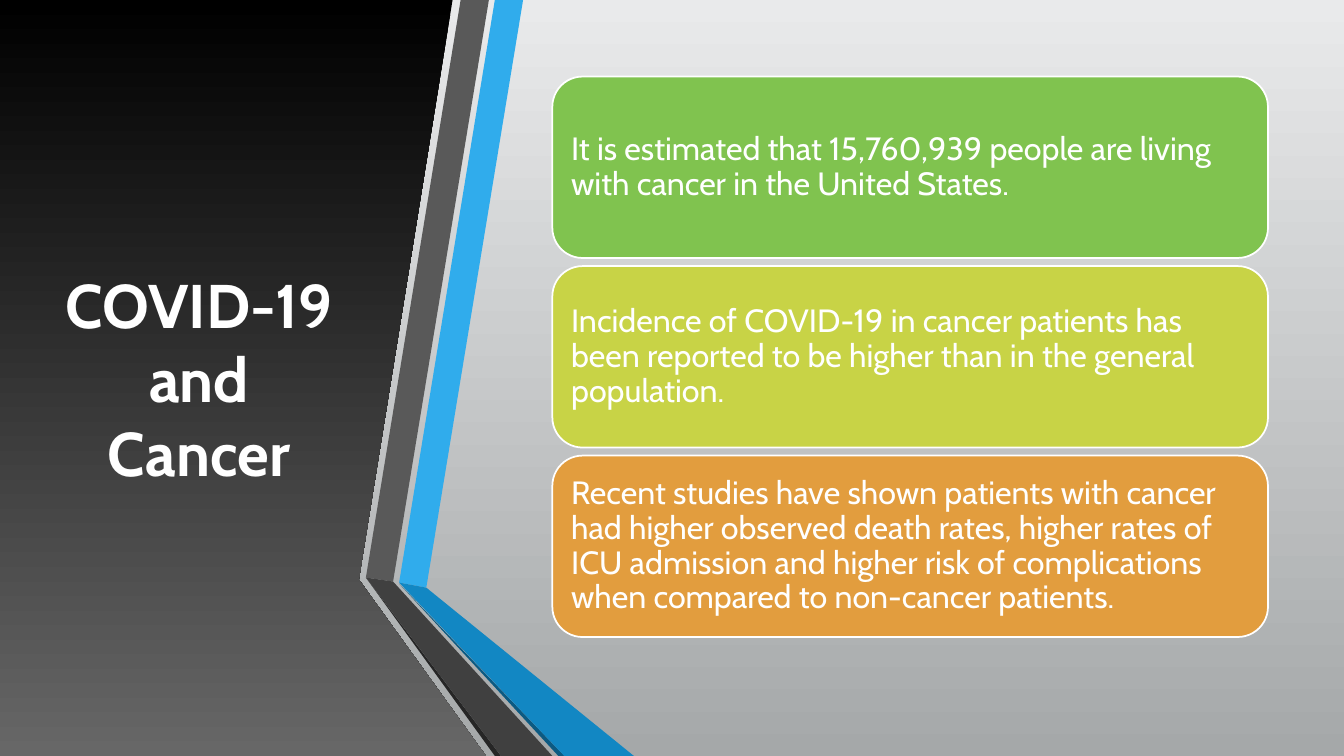
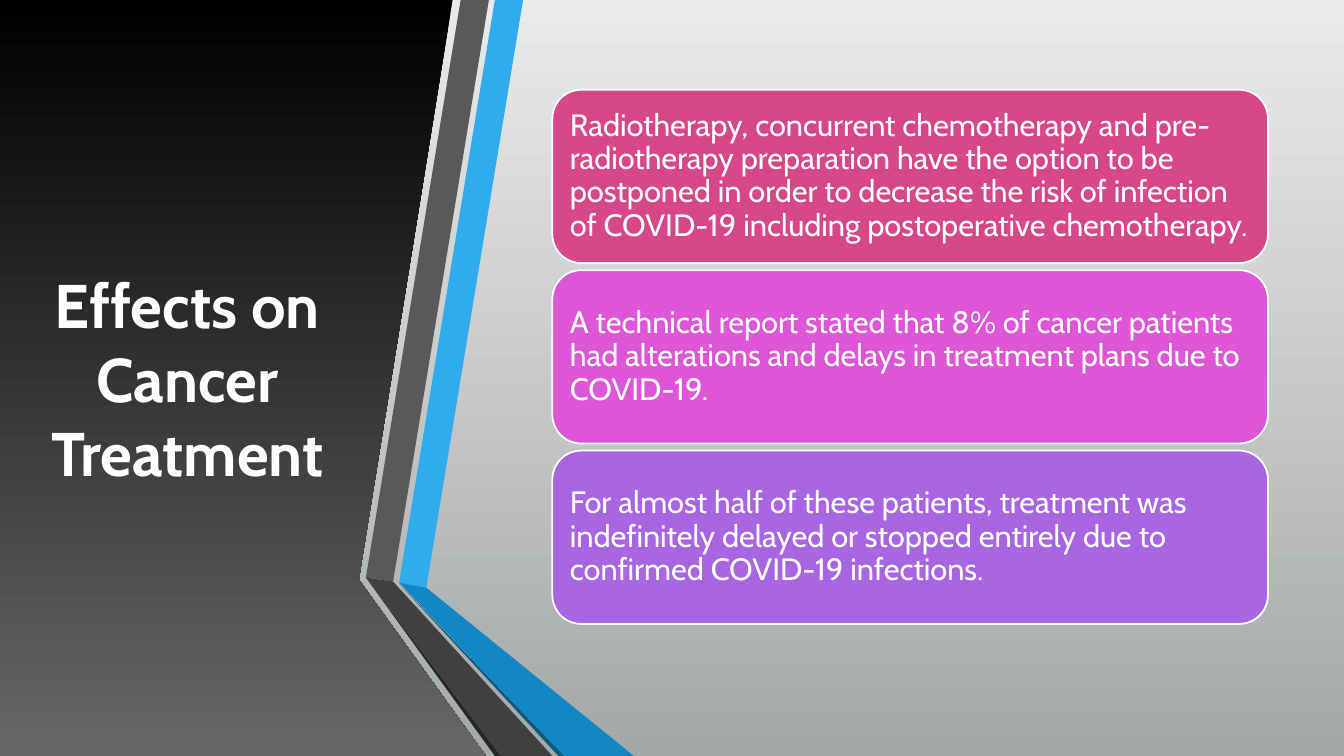
from dataclasses import dataclass

import pptx
import pptx.dml.color
import pptx.dml.fill
import pptx.enum.shapes
import pptx.enum.text
import pptx.slide
import pptx.text.text
import pptx.util

# All lengths are counted in cells of a fine grid, 100 cells to the inch.
CELL = pptx.util.Inches(0.01)
SLIDE_COLS, SLIDE_ROWS = 1333.33, 750


@dataclass(frozen=True)
class Theme:
    font: str = "Cabin"
    title_size: int = 44
    text: str = "FFFFFF"
    backdrop: tuple[str, str] = ("E9EAEB", "A5A8A9")
    panel: tuple[str, str] = ("000000", "676767")
    blue: str = "30ACEC"
    blue_fold: str = "1287C3"
    blue_edge: str = "0C5A82"
    grey: str = "595959"
    grey_fold: str = "404040"
    grey_edge: str = "262626"
    outline_width: float = 1.25


THEME = Theme()


@dataclass(frozen=True)
class Band:
    color: str
    points: tuple[tuple[int, int], ...]


@dataclass(frozen=True)
class Card:
    color: str
    text: str


@dataclass(frozen=True)
class Page:
    title: str
    title_left: int
    title_width: int
    card_height: int
    card_gap: int
    card_inset: int
    text_size: int
    cards: tuple[Card, ...]


PANEL = ((0, 0), (449, 0), (356, 575), (482, SLIDE_ROWS), (0, SLIDE_ROWS))
TITLE_TOP, TITLE_HEIGHT = 96, 558
CARD_LEFT, CARD_WIDTH, CARDS_MIDDLE = 548, 710, 354

RIBBON = (
    Band(THEME.blue, ((396, 578), (423, 583), (519, 0), (491, 0))),
    Band(THEME.grey, ((485, 0), (457, 0), (363, 573), (390, 577))),
    Band(THEME.grey_edge, ((363, 573), (491, SLIDE_ROWS), (497, SLIDE_ROWS))),
    Band(THEME.blue_edge, ((396, 579), (554, SLIDE_ROWS), (560, SLIDE_ROWS))),
    Band(THEME.blue_fold,
         ((396, 578), (560, SLIDE_ROWS), (629, SLIDE_ROWS), (423, 583))),
    Band(THEME.grey_fold,
         ((548, SLIDE_ROWS), (390, 577), (363, 573), (497, SLIDE_ROWS))),
)

PAGES = (
    Page("COVID-19 and Cancer", 53, 289, 180, 8, 10, 23, (
        Card("80C34F", "It is estimated that 15,760,939 people are living with "
                       "cancer in the United States."),
        Card("C8D346", "Incidence of COVID-19 in cancer patients has been "
                       "reported to be higher than in the general population."),
        Card("E29D3E", "Recent studies have shown patients with cancer had "
                       "higher observed death rates, higher rates of ICU "
                       "admission and higher risk of complications when "
                       "compared to non-cancer patients."),
    )),
    Page("Effects on Cancer Treatment", 25, 322, 172, 7, 9, 22, (
        Card("D64787", "Radiotherapy, concurrent chemotherapy and "
                       "pre-radiotherapy preparation have the option to be "
                       "postponed in order to decrease the risk of infection "
                       "of COVID-19 including postoperative chemotherapy."),
        Card("DC56D7", "A technical report stated that 8% of cancer patients "
                       "had alterations and delays in treatment plans due to "
                       "COVID-19."),
        Card("A666E1", "For almost half of these patients, treatment was "
                       "indefinitely delayed or stopped entirely due to "
                       "confirmed COVID-19 infections."),
    )),
)


def cells(count: float) -> pptx.util.Emu:
    return pptx.util.Emu(round(count * CELL))


def rgb(color: str) -> pptx.dml.color.RGBColor:
    return pptx.dml.color.RGBColor.from_string(color)


def fill_solid(fill: pptx.dml.fill.FillFormat, color: str) -> None:
    fill.solid()
    fill.fore_color.rgb = rgb(color)


def fill_down(fill: pptx.dml.fill.FillFormat, colors: tuple[str, str]) -> None:
    """Fill with a gradient that runs from top to bottom."""
    fill.gradient()
    fill.gradient_angle = 270
    for stop, color in zip(fill.gradient_stops, colors):
        stop.color.rgb = rgb(color)


def set_text(tf: pptx.text.text.TextFrame, text: str, size: int,
             align: pptx.enum.text.PP_ALIGN, spacing: float = 1.0,
             bold: bool = False) -> None:
    tf.text = text
    tf.word_wrap = True
    tf.auto_size = pptx.enum.text.MSO_AUTO_SIZE.NONE
    tf.vertical_anchor = pptx.enum.text.MSO_ANCHOR.MIDDLE
    p = tf.paragraphs[0]
    p.alignment = align
    p.line_spacing = spacing
    font = p.runs[0].font
    font.name, font.size, font.bold = THEME.font, pptx.util.Pt(size), bold
    font.color.rgb = rgb(THEME.text)


def add_outline(slide: pptx.slide.Slide,
                points: tuple[tuple[int, int], ...]) -> pptx.dml.fill.FillFormat:
    """Draw a closed polygon without a line and return its fill."""
    builder = slide.shapes.build_freeform(*points[0], scale=CELL)
    builder.add_line_segments(points[1:], close=True)
    sp = builder.convert_to_shape()
    sp.shadow.inherit = False
    sp.line.fill.background()
    return sp.fill


def add_title(slide: pptx.slide.Slide, page: Page) -> None:
    title = slide.shapes.title
    title.left, title.top = cells(page.title_left), cells(TITLE_TOP)
    title.width, title.height = cells(page.title_width), cells(TITLE_HEIGHT)
    set_text(title.text_frame, page.title, THEME.title_size,
             pptx.enum.text.PP_ALIGN.CENTER, bold=True)
    slide.shapes.element.append(title.element)  # in front of the panel


def add_cards(slide: pptx.slide.Slide, page: Page) -> None:
    """Stack the cards in a column centred on CARDS_MIDDLE."""
    pitch = page.card_height + page.card_gap
    top = CARDS_MIDDLE - (len(page.cards) * pitch - page.card_gap) / 2
    for row, card in enumerate(page.cards):
        sp = slide.shapes.add_shape(
            pptx.enum.shapes.MSO_SHAPE.ROUNDED_RECTANGLE,
            cells(CARD_LEFT), cells(top + row * pitch),
            cells(CARD_WIDTH), cells(page.card_height))
        sp.shadow.inherit = False
        fill_solid(sp.fill, card.color)
        sp.line.color.rgb = rgb(THEME.text)
        sp.line.width = pptx.util.Pt(THEME.outline_width)
        tf = sp.text_frame
        tf.margin_left = tf.margin_right = cells(page.card_inset)
        tf.margin_top = tf.margin_bottom = cells(page.card_inset)
        set_text(tf, card.text, page.text_size,
                 pptx.enum.text.PP_ALIGN.LEFT, spacing=0.9)


def add_page(prs: pptx.presentation.Presentation, page: Page) -> None:
    title_only = prs.slide_layouts.get_by_name("Title Only")
    slide = prs.slides.add_slide(title_only)
    fill_down(add_outline(slide, PANEL), THEME.panel)
    add_title(slide, page)
    for band in RIBBON:
        fill_solid(add_outline(slide, band.points), band.color)
    add_cards(slide, page)


def main() -> None:
    prs = pptx.Presentation()
    prs.slide_width, prs.slide_height = cells(SLIDE_COLS), cells(SLIDE_ROWS)
    fill_down(prs.slide_master.background.fill, THEME.backdrop)
    for page in PAGES:
        add_page(prs, page)
    prs.save("out.pptx")


if __name__ == "__main__":
    main()
